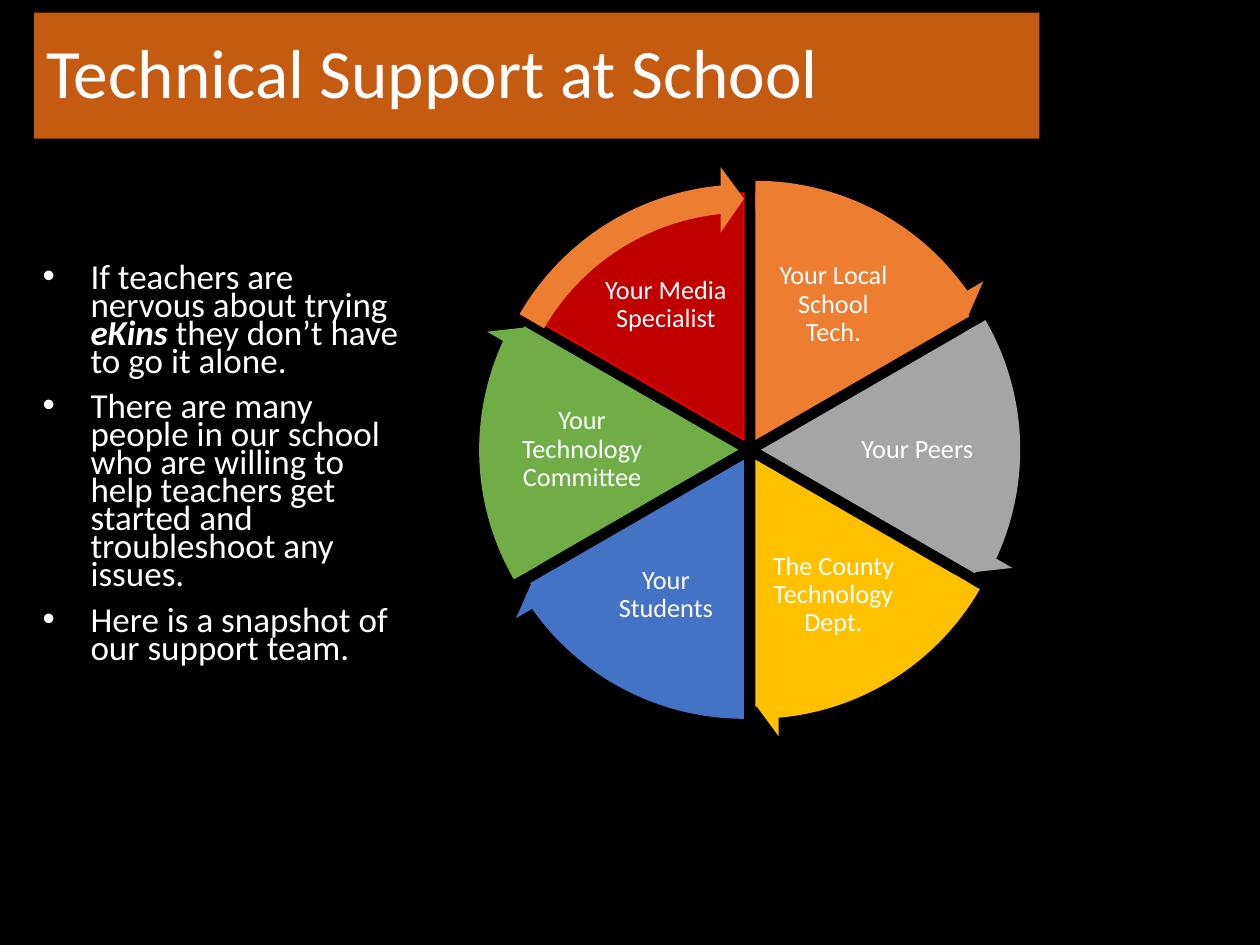
from math import cos, radians, sin

from lxml.etree import SubElement
from pptx import Presentation
from pptx.dml.color import RGBColor
from pptx.enum.shapes import MSO_SHAPE
from pptx.enum.text import MSO_ANCHOR, PP_ALIGN
from pptx.oxml.ns import qn
from pptx.util import Inches, Pt

WHEEL_CENTER = (5.95, 3.57)
SEGMENT_GAP = 0.09
LABEL_RADIUS = 1.33
PIE_SIZE = 3.92
ARROW_SIZE = 4.41
STEP = 36
FULL_TURN = 216
SEGMENTS = [
    ("Your Local School Tech.", "ED7D31", "ED7D31"),
    ("Your Peers", "A5A5A5", "A5A5A5"),
    ("The County Technology Dept.", "FFC000", "FFC000"),
    ("Your Students", "4472C4", "4472C4"),
    ("Your Technology Committee", "70AD47", "70AD47"),
    ("Your Media Specialist", "C00000", "ED7D31"),
]
SUPPORT_POINTS = [
    [("If teachers are nervous about trying ", False), ("eKins", True),
     (" they don’t have to go it alone.", False)],
    [("There are many people in our school who are willing to help teachers "
      "get started and troubleshoot any issues.", False)],
    [("Here is a snapshot of our support team.", False)],
]


def color(value):
    return RGBColor.from_string(value)


def set_format(target, values):
    for name, value in values.items():
        setattr(target, name, value)


def add_filled_shape(shapes, kind, box, fill, adjustments=()):
    shape = shapes.add_shape(kind, *map(Inches, box))
    shape.shadow.inherit = False
    shape.fill.solid()
    shape.fill.fore_color.rgb = color(fill)
    shape.line.fill.background()
    for index, value in enumerate(adjustments):
        shape.adjustments[index] = value
    return shape


def add_text_frame(shapes, box, frame_format):
    frame = shapes.add_textbox(*map(Inches, box)).text_frame
    set_format(frame, {"word_wrap": True, **frame_format})
    return frame


def add_run(paragraph, text, size, emphasis=False):
    run = paragraph.add_run()
    run.text = text
    set_format(run.font, {"name": "Calibri", "size": Pt(size),
                          "bold": emphasis, "italic": emphasis})
    run.font.color.rgb = color("FFFFFF")


def add_bullet(paragraph, indent):
    properties = paragraph._p.get_or_add_pPr()
    properties.set("marL", str(Inches(indent)))
    properties.set("indent", str(-Inches(indent)))
    SubElement(properties, qn("a:buFont")).set("typeface", "Arial")
    SubElement(properties, qn("a:buChar")).set("char", "•")


def wheel_box(index, radius, width, height):
    angle = radians(60 * (index - 1))
    center_x, center_y = WHEEL_CENTER
    return (center_x + radius * cos(angle) - width / 2,
            center_y + radius * sin(angle) - height / 2, width, height)


def add_label(shapes, index, text):
    width, height = (1.07, 0.77) if index % 3 == 1 else (1.03, 0.79)
    margins = {f"margin_{side}": Inches(0.02)
               for side in ("left", "top", "right", "bottom")}
    frame = add_text_frame(shapes, wheel_box(index, LABEL_RADIUS, width, height),
                           {"vertical_anchor": MSO_ANCHOR.MIDDLE, **margins})
    paragraph = frame.paragraphs[0]
    set_format(paragraph, {"alignment": PP_ALIGN.CENTER, "line_spacing": 0.9})
    add_run(paragraph, text, 15)


def add_wheel(slide):
    shapes = slide.shapes.add_group_shape().shapes
    starts = [(162 + STEP * index) % FULL_TURN for index in range(len(SEGMENTS))]
    for index, (label, pie_fill, _) in enumerate(SEGMENTS):
        end = (starts[index] + STEP) % FULL_TURN
        pie = add_filled_shape(shapes, MSO_SHAPE.PIE,
                               wheel_box(index, SEGMENT_GAP, PIE_SIZE, PIE_SIZE),
                               pie_fill, (starts[index], end))
        if pie_fill == "C00000":
            pie.line.color.rgb = color("FF0000")
            pie.line.width = Pt(0.75)
        add_label(shapes, index, label)
    for index, (_, _, arrow_fill) in enumerate(SEGMENTS):
        tip = (starts[index] + 32.72) % FULL_TURN
        arrow = add_filled_shape(shapes, MSO_SHAPE.CIRCULAR_ARROW,
                                 wheel_box(index, SEGMENT_GAP, ARROW_SIZE, ARROW_SIZE),
                                 arrow_fill, (0.051, 3.275, tip, starts[index], 0.059))
    arrow.top += Inches(0.03)


def add_support_points(slide):
    frame = add_text_frame(slide.shapes, (0.24, 2.08, 3.12, 3.58), {})
    for index, runs in enumerate(SUPPORT_POINTS):
        paragraph = frame.add_paragraph() if index else frame.paragraphs[0]
        add_bullet(paragraph, 0.38)
        set_format(paragraph, {"line_spacing": Pt(16),
                               "space_before": Pt(10 if index else 0)})
        for text, emphasis in runs:
            add_run(paragraph, text, 20, emphasis)


def add_title(slide):
    frame = add_text_frame(slide.shapes, (0.27, 0.25, 9, 0.7),
                           {"vertical_anchor": MSO_ANCHOR.MIDDLE})
    paragraph = frame.paragraphs[0]
    paragraph.line_spacing = 0.9
    add_run(paragraph, "Technical Support at School", 39.6)


def main():
    presentation = Presentation()
    set_format(presentation, {"slide_width": Inches(10), "slide_height": Inches(7.5)})
    slide = presentation.slides.add_slide(presentation.slide_layouts[6])
    slide.background.fill.solid()
    slide.background.fill.fore_color.rgb = color("000000")
    add_filled_shape(slide.shapes, MSO_SHAPE.RECTANGLE, (0.27, 0.1, 7.98, 1), "C55A11")
    add_wheel(slide)
    add_support_points(slide)
    add_title(slide)
    presentation.save("out.pptx")


if __name__ == "__main__":
    main()
